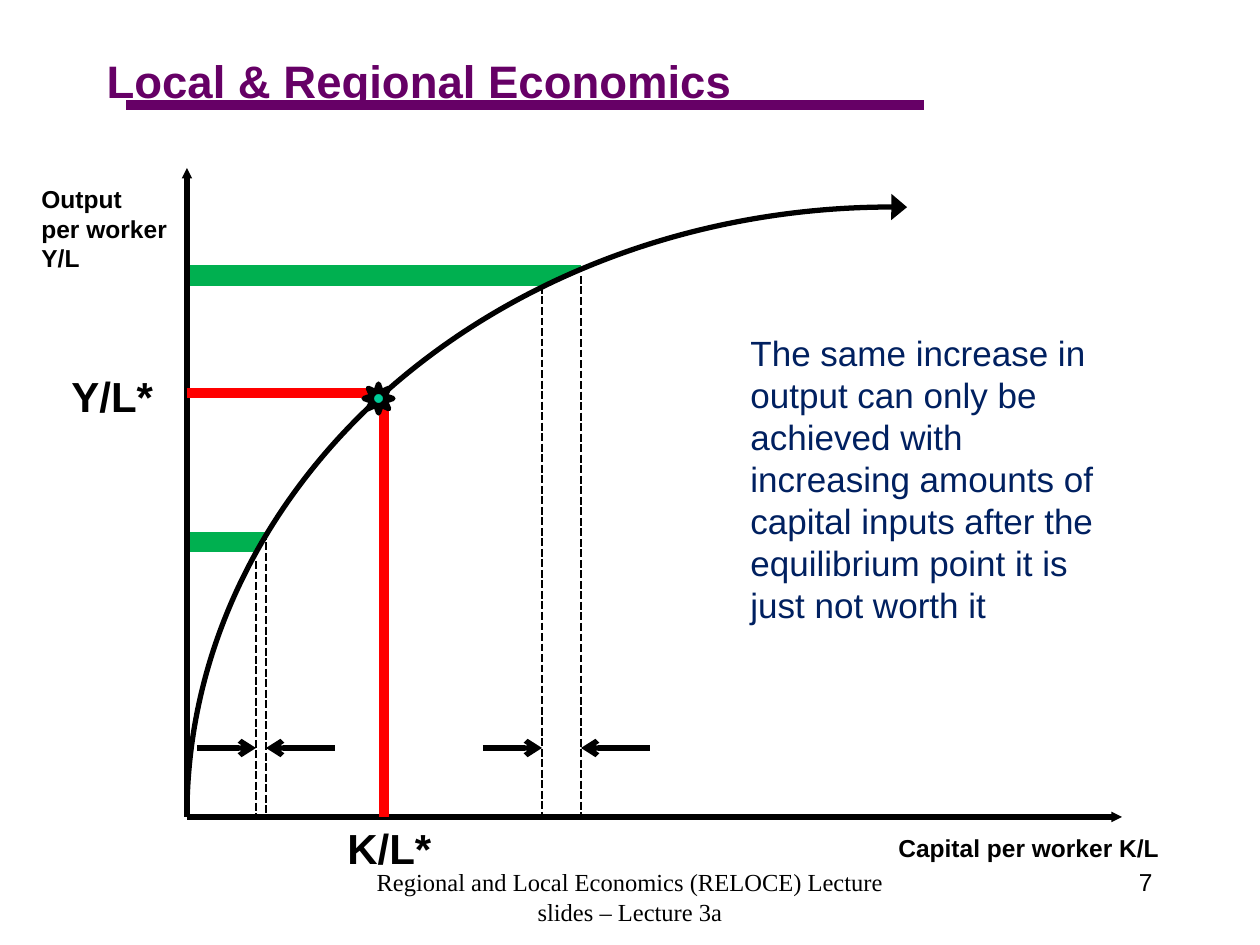
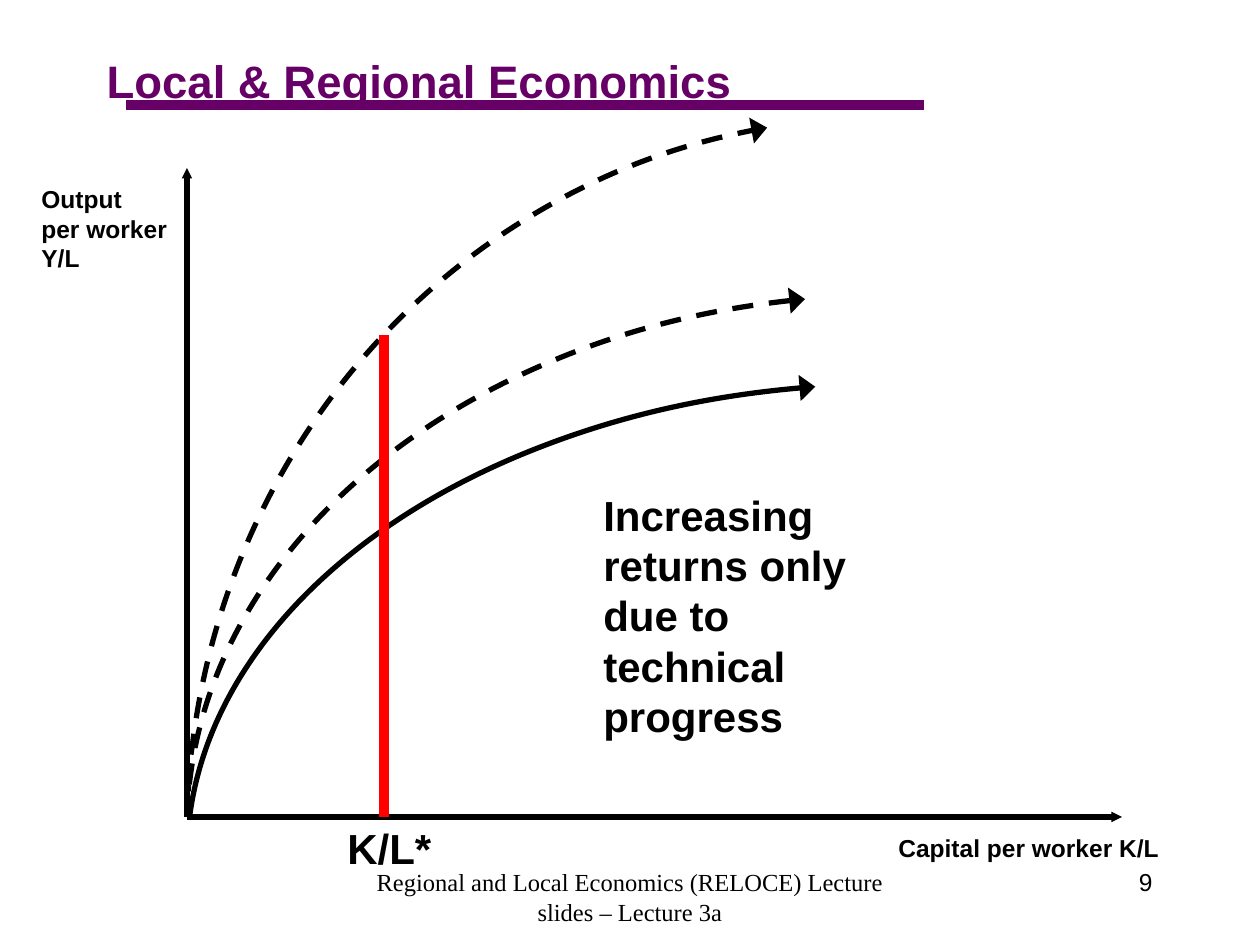
from dataclasses import dataclass

from lxml import etree
from pptx import Presentation
from pptx import util as u
from pptx.dml.color import RGBColor
from pptx.enum import dml, shapes, text
from pptx.oxml.ns import qn

BLACK = RGBColor(0x00, 0x00, 0x00)
WHITE = RGBColor(0xFF, 0xFF, 0xFF)
PURPLE = RGBColor(0x66, 0x00, 0x66)
GREEN = RGBColor(0x00, 0xB0, 0x50)
RED = RGBColor(0xFF, 0x00, 0x00)
NAVY = RGBColor(0x00, 0x20, 0x60)
TEAL = RGBColor(0x00, 0xCC, 0x99)

PX_PER_INCH = 126
TITLE = "Local & Regional Economics"
FOOTER = "Regional and Local Economics (RELOCE) Lecture slides – Lecture 3a"

ORIGIN_X, ORIGIN_Y = 187, 817  # where the two axes meet
EQUILIBRIUM_X, EQUILIBRIUM_Y = 384, 393
ARROWS_Y = 748


@dataclass(frozen=True)
class Box:
    left: int
    top: int
    width: int
    height: int

    def emu(self) -> list[int]:
        return [px(v) for v in (self.left, self.top, self.width, self.height)]


@dataclass(frozen=True)
class Curve:
    """Part of an ellipse; start and end are degrees clockwise from the right."""
    box: Box
    start: float
    end: float
    dashed: bool = False


@dataclass(frozen=True)
class CapitalGap:
    """Extra capital between two guides that drop from the curve."""
    left: int
    left_top: int
    right: int
    right_top: int
    output_y: int


GAPS = [CapitalGap(256, 561, 266, 532, 542), CapitalGap(542, 286, 581, 276, 276)]
OUTPUT_CURVE = Curve(Box(ORIGIN_X, 207, 1409, 1216), 180.03, 271.47)
PROGRESS_CURVES = [
    Curve(Box(ORIGIN_X, 118, 1389, 1434), 183.6, 260.82, dashed=True),
    Curve(Box(ORIGIN_X, 295, 1409, 1067), 183.6, 260.73, dashed=True),
    Curve(Box(ORIGIN_X, 384, 1409, 948), 183.6, 260.82),
]


def px(v: int) -> int:
    return round(v * u.Inches(1) / PX_PER_INCH)


def write(tf, content: str, *, size: int, color=BLACK, bold=False, font="Arial",
          align=text.PP_ALIGN.LEFT, wrap=True) -> None:
    tf.text = content
    tf.word_wrap = wrap
    tf.auto_size = text.MSO_AUTO_SIZE.NONE
    tf.vertical_anchor = text.MSO_ANCHOR.TOP
    for p in tf.paragraphs:
        p.alignment = align
        for r in p.runs:
            r.font.size = u.Pt(size)
            r.font.name = font
            r.font.bold = bold
            r.font.color.rgb = color


def add_text(s, box: Box, content: str, **style) -> None:
    write(s.shapes.add_textbox(*box.emu()).text_frame, content, **style)


def style_line(line, color: RGBColor, width: float, dash=None) -> None:
    line.color.rgb = color
    line.width = u.Pt(width)
    if dash:
        line.dash_style = dash


def add_arrowhead(sp, kind: str, width="med", length="med") -> None:
    ln = sp.line._get_or_add_ln()
    etree.SubElement(ln, qn("a:tailEnd"), type=kind, w=width, len=length)


def add_line(s, x1: int, y1: int, x2: int, y2: int, width: float,
             color=BLACK, dash=None):
    sp = s.shapes.add_connector(shapes.MSO_CONNECTOR.STRAIGHT,
                                px(x1), px(y1), px(x2), px(y2))
    style_line(sp.line, color, width, dash)
    etree.SubElement(sp._element.spPr, qn("a:effectLst"))
    # The outline is already in place, so the arrowhead can follow at any time.
    return sp


def add_outlined(s, kind, box: Box, fill: RGBColor, dash=None):
    sp = s.shapes.add_shape(kind, *box.emu())
    sp.shadow.inherit = False
    sp.fill.solid()
    sp.fill.fore_color.rgb = fill
    style_line(sp.line, BLACK, 3, dash)
    return sp


def add_curve(s, curve: Curve) -> None:
    dash = dml.MSO_LINE.DASH if curve.dashed else None
    sp = add_outlined(s, shapes.MSO_SHAPE.ARC, curve.box, WHITE, dash)
    for i, degrees in enumerate((curve.start, curve.end)):
        sp.adjustments[i] = degrees * 0.6  # 60000ths of a degree over 100000
    add_arrowhead(sp, "triangle", width="lg")


def add_axes(s) -> None:
    for x, y in ((ORIGIN_X, 168), (1122, ORIGIN_Y)):
        axis = add_line(s, ORIGIN_X, ORIGIN_Y, x, y, 3)
        add_arrowhead(axis, "triangle", "sm", "sm")
    add_text(s, Box(886, 827, 287, 43), "Capital per worker K/L",
             size=14, bold=True, wrap=False)
    add_text(s, Box(29, 178, 151, 102), "Output\nper worker\nY/L",
             size=14, bold=True, wrap=False)


def add_gap(s, gap: CapitalGap) -> None:
    for x, top in ((gap.left, gap.left_top), (gap.right, gap.right_top)):
        add_line(s, x, top, x, ORIGIN_Y, 1.5, dash=dml.MSO_LINE.SQUARE_DOT)
    for start, end in ((gap.left - 59, gap.left), (gap.right + 69, gap.right)):
        add_arrowhead(add_line(s, start, ARROWS_Y, end, ARROWS_Y, 3), "arrow")


def add_equilibrium_capital(s, top: int) -> None:
    add_line(s, EQUILIBRIUM_X, top, EQUILIBRIUM_X, ORIGIN_Y, 6, RED)
    add_text(s, Box(335, 816, 111, 64), "K/L*", size=24, bold=True, wrap=False)


def add_base_slide(prs, number: int):
    s = prs.slides.add_slide(prs.slide_layouts[5])
    title = s.shapes.title
    title.left, title.top, title.width, title.height = Box(94, 47, 840, 67).emu()
    write(title.text_frame, TITLE, size=26, color=PURPLE, bold=True)
    add_line(s, 126, 105, 924, 105, 6, PURPLE)
    add_text(s, Box(357, 861, 546, 63), FOOTER, size=14,
             font="Times New Roman", align=text.PP_ALIGN.CENTER)
    add_text(s, Box(903, 861, 262, 63), str(number), size=14,
             align=text.PP_ALIGN.RIGHT)
    return s


def build_diminishing_returns(prs) -> None:
    s = add_base_slide(prs, 7)
    for gap in GAPS:
        add_line(s, ORIGIN_X, gap.output_y, gap.right, gap.output_y, 12, GREEN)
    add_curve(s, OUTPUT_CURVE)
    add_axes(s)
    for gap in GAPS:
        add_gap(s, gap)
    add_text(s, Box(738, 325, 384, 310),
             "The same increase in output can only be achieved with increasing "
             "amounts of capital inputs after the equilibrium point it is just "
             "not worth it", size=20, color=NAVY)
    add_equilibrium_capital(s, EQUILIBRIUM_Y)
    add_line(s, ORIGIN_X, EQUILIBRIUM_Y, EQUILIBRIUM_X, EQUILIBRIUM_Y, 6, RED)
    sun = add_outlined(s, shapes.MSO_SHAPE.SUN, Box(364, 384, 29, 29), TEAL)
    sun.adjustments[0] = 0.25
    add_text(s, Box(59, 364, 108, 64), "Y/L*", size=24, bold=True, wrap=False)


def build_technical_progress(prs) -> None:
    s = add_base_slide(prs, 9)
    for curve in PROGRESS_CURVES:
        add_curve(s, curve)
    add_axes(s)
    add_equilibrium_capital(s, 335)
    add_text(s, Box(591, 483, 315, 267),
             "Increasing returns only due to technical progress",
             size=24, bold=True)


def main() -> None:
    prs = Presentation()
    prs.slide_width, prs.slide_height = px(1260), px(945)
    build_diminishing_returns(prs)
    build_technical_progress(prs)
    prs.save("out.pptx")


if __name__ == "__main__":
    main()
